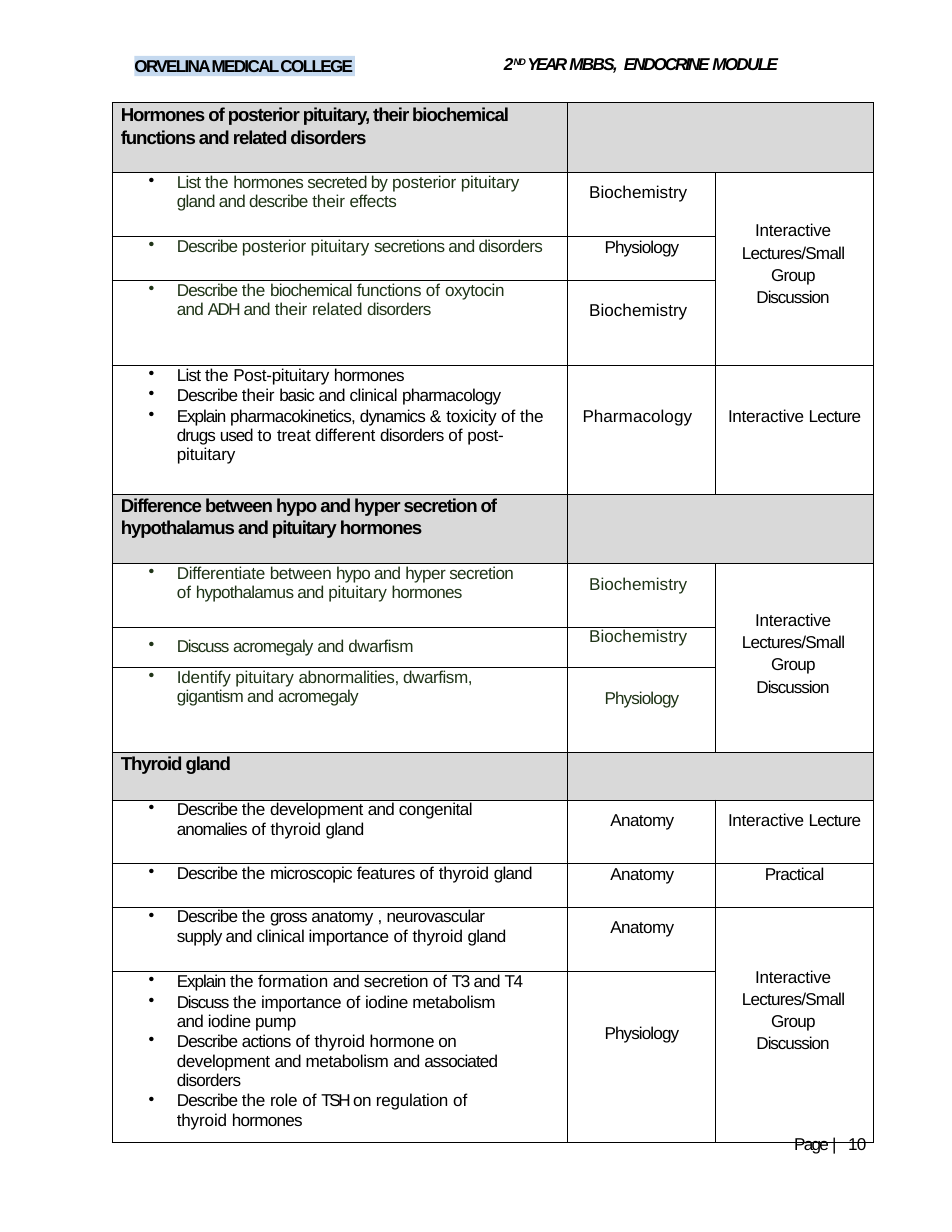
import itertools
from dataclasses import dataclass

import lxml.etree
import pptx
import pptx.dml.color
import pptx.enum.shapes
import pptx.enum.text
import pptx.oxml.ns
import pptx.util

Cm = pptx.util.Cm
Pt = pptx.util.Pt
qn = pptx.oxml.ns.qn
ALIGN = pptx.enum.text.PP_ALIGN


@dataclass(frozen=True)
class Theme:
    font: str = "Arial"
    ink: str = "000000"
    green: str = "1F3417"
    band: str = "D9D9D9"
    highlight: str = "C5D9EF"
    body: float = 11
    heading: float = 12
    superscript: float = 10.5
    border: float = 0.5


THEME = Theme()

TRACKING = {
    0.1: "& to",
    0: "of Biochemistry Pharmacology",
    -0.1: "the their pituitary thyroid treat different Identify formation",
    -0.2: "posterior related Post-pituitary toxicity Differentiate role regulation Interactive",
    -0.3: "effects functions oxytocin clinical post- between dwarfism dwarfism, abnormalities, "
          "development congenital features , importance iodine metabolism pump hormone on",
    -0.4: "hyper secretion anatomy Anatomy",
    -0.6: "Describe dynamics drugs acromegaly anomalies associated Physiology",
    -0.7: "Explain basic used gross Discussion",
    -0.8: "Discuss",
    -1: "T3 T4",
    -1.1: "ADH",
    -1.6: "TSH",
}
WORD_TRACKING = {word: value for value, words in TRACKING.items() for word in words.split()}


def write(para, text, size=THEME.body, color=THEME.ink, bold=False, italic=False,
          tracking=None, baseline=0):
    if tracking is None:
        words = text.split()
        groups = itertools.groupby(words, lambda word: WORD_TRACKING.get(word, -0.5))
        parts = [(" ".join(group) + " ", value) for value, group in groups]
        parts[-1] = (parts[-1][0].rstrip(), parts[-1][1])
    else:
        parts = [(text, tracking)]
    for piece, value in parts:
        span = para.add_run()
        span.text = piece
        font = span.font
        font.name, font.size, font.bold, font.italic = THEME.font, Pt(size), bold, italic
        font.color.rgb = pptx.dml.color.RGBColor.from_string(color)
        props = span._r.get_or_add_rPr()
        props.set("spc", str(round(value * 100)))
        if baseline:
            props.set("baseline", str(baseline * 1000))


class Page:
    def __init__(self, deck, theme):
        self.theme = theme
        self.page = deck.slides.add_slide(deck.slide_layouts[6])

    def label(self, left, top, width, height, spans, fill=None, inset=0, leading=None):
        place = [Cm(value) for value in (left, top, width, height)]
        if fill:
            box = self.page.shapes.add_shape(pptx.enum.shapes.MSO_SHAPE.RECTANGLE, *place)
            box.shadow.inherit = False
            box.fill.solid()
            box.fill.fore_color.rgb = pptx.dml.color.RGBColor.from_string(fill)
            box.line.fill.background()
        else:
            box = self.page.shapes.add_textbox(*place)
        frame = box.text_frame
        frame.word_wrap = True
        frame.vertical_anchor = pptx.enum.text.MSO_ANCHOR.TOP
        frame.margin_left = frame.margin_right = frame.margin_bottom = 0
        frame.margin_top = Cm(inset)
        para = frame.paragraphs[0]
        para.alignment = ALIGN.LEFT
        if leading:
            para.line_spacing = Pt(leading)
        for text, style in spans:
            write(para, text, **style)

    def grid(self, left, top, columns, rows):
        frame = self.page.shapes.add_table(len(rows), len(columns), Cm(left), Cm(top),
                                           Cm(sum(columns)), Cm(sum(rows)))
        self.table = frame.table
        self.table.first_row = self.table.horz_banding = False
        for column, width in zip(self.table.columns, columns):
            column.width = Cm(width)
        for row, height in zip(self.table.rows, rows):
            row.height = Cm(height)
        for cell in self.table.iter_cells():
            self.margins(cell)
            for side in ("lnL", "lnR", "lnT", "lnB"):
                line = lxml.etree.SubElement(cell._tc.get_or_add_tcPr(), qn("a:" + side),
                                             w=str(Pt(self.theme.border)))
                solid = lxml.etree.SubElement(line, qn("a:solidFill"))
                lxml.etree.SubElement(solid, qn("a:srgbClr"), val=self.theme.ink)
            cell.fill.background()

    def margins(self, cell, left=0, top=0, right=0, bottom=0):
        cell.margin_left, cell.margin_top = Cm(left), Cm(top)
        cell.margin_right, cell.margin_bottom = Cm(right), Cm(bottom)

    def heading(self, row, lines, leading=14.1):
        cells = [self.table.cell(row, column) for column in range(3)]
        cells[1].merge(cells[2])
        for cell in cells:
            cell.fill.solid()
            cell.fill.fore_color.rgb = pptx.dml.color.RGBColor.from_string(self.theme.band)
        self.margins(cells[0], left=0.2)
        for index, line in enumerate(lines):
            frame = cells[0].text_frame
            para = frame.add_paragraph() if index else frame.paragraphs[0]
            para.line_spacing = Pt(leading)
            write(para, line, size=self.theme.heading, bold=True, tracking=-0.7)

    def bullets(self, row, items, color=THEME.ink, dot=None, narrowing=0, **margins):
        cell = self.table.cell(row, 0)
        self.margins(cell, **margins)
        for index, item in enumerate(items):
            frame = cell.text_frame
            para = frame.add_paragraph() if index else frame.paragraphs[0]
            para.line_spacing = 1.02
            para.space_before = Pt(0.6 if index else 0.1)
            props = para._p.get_or_add_pPr()
            props.set("marL", str(Cm(1.47)))
            props.set("indent", str(Cm(-0.64)))
            if index and narrowing:
                props.set("marR", str(Cm(narrowing)))
            tint = lxml.etree.SubElement(props, qn("a:buClr"))
            lxml.etree.SubElement(tint, qn("a:srgbClr"), val=dot or color)
            lxml.etree.SubElement(props, qn("a:buChar"), char="•")
            write(para, item, color=color)

    def entry(self, row, column, text, top, align=ALIGN.CENTER, left=0, right=0,
              spacing=1.0, color=THEME.ink, rows=1):
        cell = self.table.cell(row, column)
        if rows > 1:
            cell.merge(self.table.cell(row + rows - 1, column))
        self.margins(cell, left=left, top=top, right=right)
        para = cell.text_frame.paragraphs[0]
        para.alignment = align
        para.line_spacing = spacing
        write(para, text, color=color)


WRAP = {"right": 0.94}
GREEN = {"color": THEME.green}
HEADINGS = [
    (0, ["Hormones of posterior pituitary, their biochemical functions and related disorders"], 14.6),
    (5, ["Difference between hypo and hyper secretion of",
         "hypothalamus and pituitary hormones"], 14.1),
    (9, ["Thyroid gland"], 14.1),
]
OBJECTIVES = [
    (1, ["List the hormones secreted by posterior pituitary gland and describe their effects"],
     {**GREEN, **WRAP, "dot": THEME.ink}),
    (2, ["Describe posterior pituitary secretions and disorders"], GREEN),
    (3, ["Describe the biochemical functions of oxytocin and ADH and their related disorders"],
     {**GREEN, **WRAP}),
    (4, ["List the Post-pituitary hormones",
         "Describe their basic and clinical pharmacology",
         "Explain pharmacokinetics, dynamics & toxicity of the drugs used to treat different "
         "disorders of post- pituitary"], {"right": 0.2}),
    (6, ["Differentiate between hypo and hyper secretion of hypothalamus and pituitary hormones"],
     {**GREEN, **WRAP}),
    (7, ["Discuss acromegaly and dwarfism"], {**GREEN, "top": 0.2}),
    (8, ["Identify pituitary abnormalities, dwarfism, gigantism and acromegaly"],
     {**GREEN, **WRAP}),
    (10, ["Describe the development and congenital anomalies of thyroid gland"], WRAP),
    (11, ["Describe the microscopic features of thyroid gland"], {}),
    (12, ["Describe the gross anatomy , neurovascular supply and clinical importance of "
          "thyroid gland"], WRAP),
    (13, ["Explain the formation and secretion of T3 and T4",
          "Discuss the importance of iodine metabolism and iodine pump",
          "Describe actions of thyroid hormone on development and metabolism and associated "
          "disorders",
          "Describe the role of TSH on regulation of thyroid hormones"],
     {**WRAP, "narrowing": 0.3}),
]
SUBJECT_STYLES = {
    "Biochemistry": {"align": ALIGN.RIGHT, "right": 0.64},
    "Pharmacology": {"align": ALIGN.RIGHT, "right": 0.53},
    "Physiology": {"align": ALIGN.LEFT, "left": 0.84},
    "Anatomy": {"align": ALIGN.LEFT, "left": 0.97},
}
SUBJECTS = [
    (1, "Biochemistry", 0.25), (2, "Physiology", 0.03), (3, "Biochemistry", 0.46),
    (4, "Pharmacology", 0.94), (6, "Biochemistry", 0.25), (7, "Biochemistry", 0),
    (8, "Physiology", 0.48), (10, "Anatomy", 0.25), (11, "Anatomy", 0.03),
    (12, "Anatomy", 0.25), (13, "Physiology", 1.19),
]
METHODS = [(4, "Interactive Lecture", 0.94), (10, "Interactive Lecture", 0.25),
           (11, "Practical", 0.03)]
SHARED_METHODS = [(1, 3, 1.04), (6, 3, 1.0), (12, 2, 1.3)]


def main():
    deck = pptx.Presentation()
    deck.slide_width, deck.slide_height = Cm(21.59), Cm(27.94)
    page = Page(deck, THEME)
    page.label(18.01, 25.76, 1.7, 0.46, [("Page ", {"tracking": -1.1}), ("| ", {"tracking": 2.2}),
                                         ("10", {"tracking": -0.6})], leading=11.5)
    page.label(3.05, 1.27, 5, 0.46, [("ORVELINA MEDICAL COLLEGE", {"bold": True, "tracking": -1.1})],
               fill=THEME.highlight, leading=12.9)
    page.grid(2.54, 2.33, [10.33, 3.36, 3.58],
              [1.58, 1.45, 1, 1.93, 2.92, 1.57, 1.45, 0.91, 1.93, 1.07, 1.45, 0.98, 1.47, 3.43])
    for row, lines, leading in HEADINGS:
        page.heading(row, lines, leading)
    for row, items, style in OBJECTIVES:
        page.bullets(row, items, **style)
    for row, subject, top in SUBJECTS:
        color = THEME.green if 6 <= row <= 8 else THEME.ink
        page.entry(row, 1, subject, top, color=color, **SUBJECT_STYLES[subject])
    for row, method, top in METHODS:
        page.entry(row, 2, method, top)
    for row, rows, top in SHARED_METHODS:
        page.entry(row, 2, "Interactive Lectures/Small Group Discussion", top,
                   left=0.43, right=0.5, spacing=1.17, rows=rows)
    slanted = {"bold": True, "italic": True}
    page.label(11.43, 1.19, 8.2, 0.51, [
        ("2", {**slanted, "tracking": -0.6}),
        ("ND ", {**slanted, "tracking": -0.8, "size": THEME.superscript, "baseline": 32}),
        ("YEAR ", {**slanted, "tracking": -1.7}), ("MBBS,  ", {**slanted, "tracking": -1.1}),
        ("ENDOCRINE ", {**slanted, "tracking": -1.4}), ("MODULE", {**slanted, "tracking": -1.1}),
    ], inset=0.03)
    deck.save("out.pptx")


if __name__ == "__main__":
    main()
